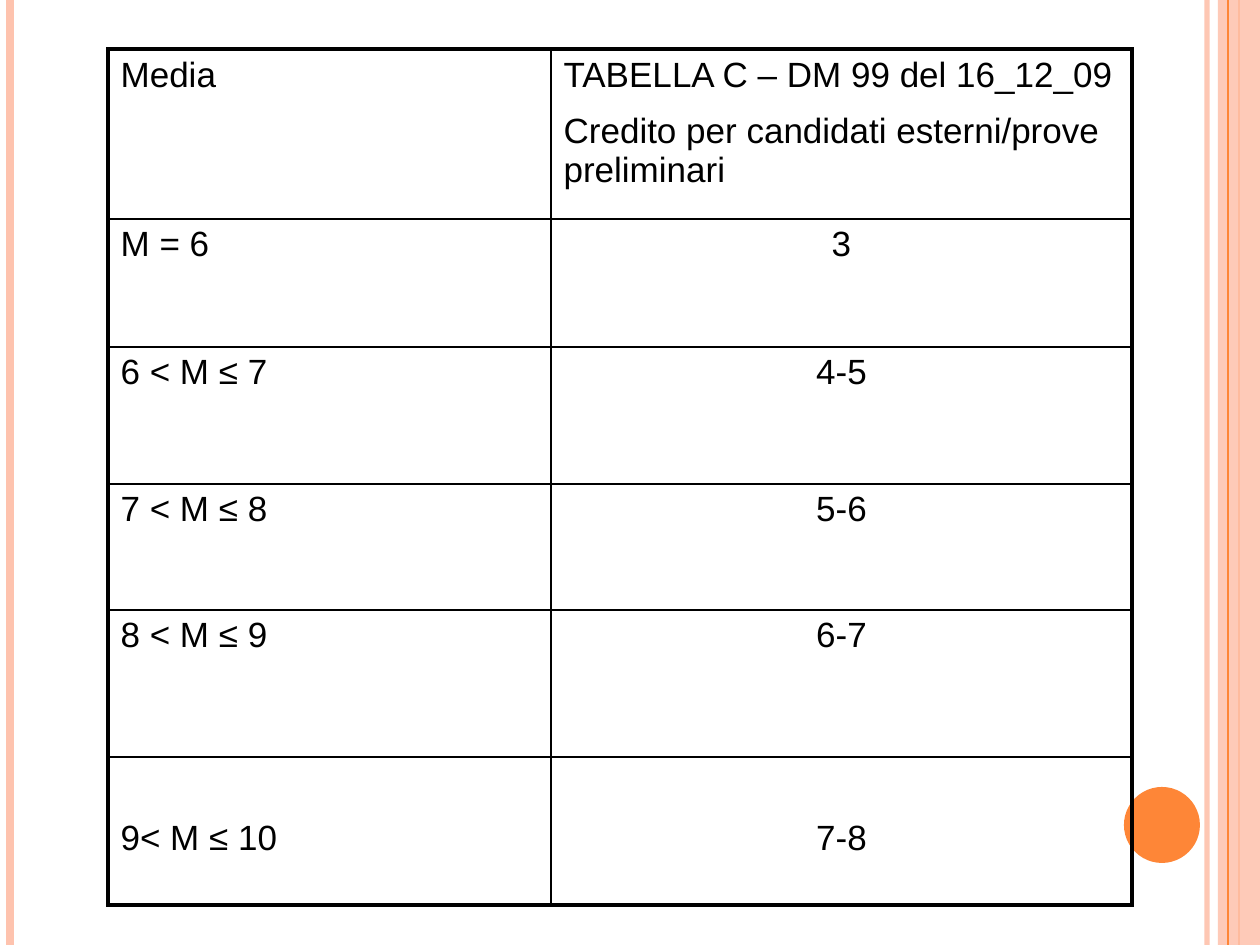
import pptx
import pptx.util
import pptx.dml.color
import pptx.enum.shapes
import pptx.enum.text
import pptx.oxml.ns
from lxml import etree

BLACK = pptx.dml.color.RGBColor(0x00, 0x00, 0x00)
PEACH = pptx.dml.color.RGBColor(0xFE, 0xC3, 0xAE)
ORANGE = pptx.dml.color.RGBColor(0xFE, 0x86, 0x37)

SLIDE_WIDTH, SLIDE_HEIGHT = 1260, 945
LEFT_STRIPES = [
    (1207, PEACH, 3, 93),
    (10, PEACH, 4.5, 100),
    (1239, ORANGE, 1.5, 100),
]
BAND = (1218, 0, 42, 945)
BAND_STRIPE = (1228, ORANGE, 0.75, 100)
DISC = (1124, 787, 76, 76)

CREDITS = [
    ("Media", "TABELLA C – DM 99 del 16_12_09\n"
              "Credito per candidati esterni/prove preliminari"),
    ("M = 6", "3"),
    ("6 < M ≤ 7", "4-5"),
    ("7 < M ≤ 8", "5-6"),
    ("8 < M ≤ 9", "6-7"),
    ("9< M ≤ 10", "7-8"),
]
TABLE_LEFT, TABLE_TOP = 108, 49
COLUMN_WIDTHS = [443, 581]
ROW_HEIGHTS = [170, 128, 137, 126, 147, 148]
LAST_ROW_INSET = 62
OUTER_BORDER, INNER_BORDER = 2.25, 1


def px(length):
    return round(length * 914400 / 126)


def set_alpha(fill_parent, percent):
    colour = fill_parent.find(".//" + pptx.oxml.ns.qn("a:srgbClr"))
    etree.SubElement(colour, pptx.oxml.ns.qn("a:alpha"), val=str(percent * 1000))


def add_stripe(slide, x, colour, width, opacity):
    stripe = slide.shapes.add_connector(
        pptx.enum.shapes.MSO_CONNECTOR.STRAIGHT, px(x), 0, px(x), px(SLIDE_HEIGHT))
    stripe.line.color.rgb = colour
    stripe.line.width = pptx.util.Pt(width)
    properties = stripe._element.spPr
    if opacity < 100:
        set_alpha(properties, opacity)
    etree.SubElement(properties, pptx.oxml.ns.qn("a:effectLst"))


def add_plain_shape(slide, preset, box, colour):
    shape = slide.shapes.add_shape(preset, *map(px, box))
    shape.shadow.inherit = False
    shape.fill.solid()
    shape.fill.fore_color.rgb = colour
    shape.line.fill.background()
    return shape


def set_borders(cell, widths):
    properties = cell._tc.get_or_add_tcPr()
    for position, (side, width) in enumerate(widths.items()):
        border = etree.Element(pptx.oxml.ns.qn("a:ln" + side),
                               w=str(pptx.util.Pt(width)))
        fill = etree.SubElement(border, pptx.oxml.ns.qn("a:solidFill"))
        etree.SubElement(fill, pptx.oxml.ns.qn("a:srgbClr"), val=str(BLACK))
        properties.insert(position, border)


def write_cell(cell, text, centred):
    cell.text_frame.text = text
    for index, paragraph in enumerate(cell.text_frame.paragraphs):
        if index:
            paragraph.space_before = pptx.util.Pt(10)
        if centred:
            paragraph.alignment = pptx.enum.text.PP_ALIGN.CENTER
        for run in paragraph.runs:
            run.font.name = "Arial"
            run.font.size = pptx.util.Pt(20)
            run.font.bold = False
            run.font.color.rgb = BLACK


def add_credit_table(slide):
    last_row, last_column = len(CREDITS) - 1, len(COLUMN_WIDTHS) - 1
    table = slide.shapes.add_table(
        len(CREDITS), len(COLUMN_WIDTHS), px(TABLE_LEFT), px(TABLE_TOP),
        px(sum(COLUMN_WIDTHS)), px(sum(ROW_HEIGHTS))).table
    table.first_row = False
    table.horz_banding = False
    for column, width in zip(table.columns, COLUMN_WIDTHS):
        column.width = px(width)
    for r, (row, height) in enumerate(zip(table.rows, ROW_HEIGHTS)):
        row.height = px(height)
        for c, text in enumerate(CREDITS[r]):
            cell = table.cell(r, c)
            write_cell(cell, text, centred=r > 0 and c > 0)
            cell.fill.background()
            if r == last_row:
                cell.margin_top = px(LAST_ROW_INSET)
            outer = {"L": c == 0, "R": c == last_column,
                     "T": r == 0, "B": r == last_row}
            set_borders(cell, {side: OUTER_BORDER if edge else INNER_BORDER
                               for side, edge in outer.items()})


def main():
    presentation = pptx.Presentation()
    presentation.slide_width = px(SLIDE_WIDTH)
    presentation.slide_height = px(SLIDE_HEIGHT)
    slide = presentation.slides.add_slide(presentation.slide_layouts[6])
    for stripe in LEFT_STRIPES:
        add_stripe(slide, *stripe)
    band = add_plain_shape(slide, pptx.enum.shapes.MSO_SHAPE.RECTANGLE, BAND, PEACH)
    set_alpha(band._element.spPr, 87)
    add_stripe(slide, *BAND_STRIPE)
    add_plain_shape(slide, pptx.enum.shapes.MSO_SHAPE.OVAL, DISC, ORANGE)
    add_credit_table(slide)
    presentation.save("out.pptx")


if __name__ == "__main__":
    main()
